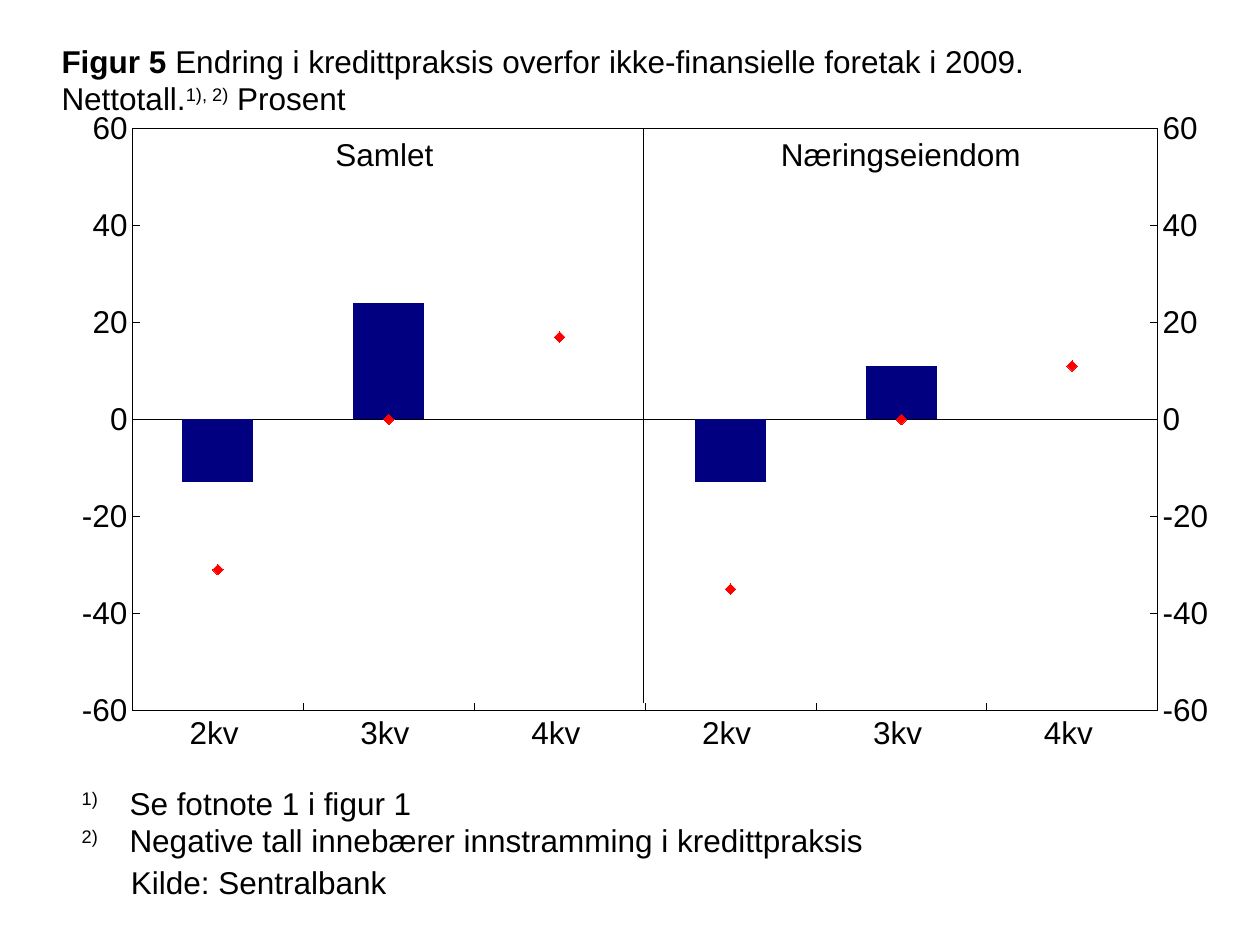
from copy import deepcopy

from lxml import etree
from pptx import Presentation
from pptx.chart.data import CategoryChartData
from pptx.dml.color import RGBColor
from pptx.enum.chart import (XL_CHART_TYPE, XL_MARKER_STYLE, XL_TICK_LABEL_POSITION,
                             XL_TICK_MARK)
from pptx.enum.shapes import MSO_CONNECTOR
from pptx.enum.text import MSO_ANCHOR, PP_ALIGN
from pptx.oxml import parse_xml
from pptx.oxml.ns import nsdecls, qn
from pptx.util import Inches, Pt

COLUMN = XL_CHART_TYPE.COLUMN_CLUSTERED
DIAMOND = XL_MARKER_STYLE.DIAMOND
INSIDE, NO_TICK = XL_TICK_MARK.INSIDE, XL_TICK_MARK.NONE
NO_LABEL = XL_TICK_LABEL_POSITION.NONE
LEFT, CENTER = PP_ALIGN.LEFT, PP_ALIGN.CENTER
TOP, BOTTOM = MSO_ANCHOR.TOP, MSO_ANCHOR.BOTTOM


def color(text):
    return RGBColor.from_string(text)


def add_text(box, lines, align=LEFT, anchor=TOP):
    """Add a text box; each line is a list of (text, style), style "b", "sup" or ""."""
    frame = slide.shapes.add_textbox(*(Inches(v) for v in box)).text_frame
    frame.word_wrap = True
    frame.vertical_anchor = anchor
    for i, line in enumerate(lines):
        para = frame.add_paragraph() if i else frame.paragraphs[0]
        para.alignment = align
        para.font.name, para.font.size = "Arial", Pt(18)
        para.font.color.rgb = color("000000")
        for words, style in line:
            run = para.add_run()
            run.text = words
            if style == "b":
                run.font.bold = True
            elif style == "sup":
                run.font._element.set("baseline", "30000")
    return frame


prs = Presentation()
prs.slide_width, prs.slide_height = Inches(10), Inches(7.5)
slide = prs.slides.add_slide(prs.slide_layouts[6])

# Chart: columns for the reported change, diamonds for the expected change
data = CategoryChartData()
data.categories = ["1", "2", "3", "4", "5", "6"]
gap = [None] * 3
data.add_series("Series 1", [-13, 24, None] + gap)
data.add_series("Series 2", gap + [-13, 11, None])
data.add_series("Series 3", [-31, 0, 17] + gap)
data.add_series("Series 4", gap + [-35, 0, 11])
x, y, w, h = 0.39, 0.86, 9.45, 5.55
chart = slide.shapes.add_chart(COLUMN, Inches(x), Inches(y), Inches(w), Inches(h),
                               data).chart
chart.has_legend = chart.has_title = False
chart.font.name, chart.font.size = "Arial Narrow", Pt(18)
chart.font.color.rgb = color("000000")

cat, val = chart.category_axis, chart.value_axis
for axis in (cat, val):
    axis.has_major_gridlines = False
    axis.minor_tick_mark = NO_TICK
    axis.format.line.color.rgb = color("000000")
    axis.format.line.width = Pt(0.25)
cat.major_tick_mark = NO_TICK
cat.tick_label_position = NO_LABEL
val.major_tick_mark = INSIDE
val.minimum_scale, val.maximum_scale, val.major_unit = -60, 60, 20
font = val.tick_labels.font
font.name, font.size = "Arial", Pt(18)
font.color.rgb = color("000000")

bars = chart.plots[0]
bars.gap_width, bars.overlap = 140, 100
bars.vary_by_categories = False
for series in list(bars.series)[:2]:
    series.invert_if_negative = False
    series.format.fill.solid()
    series.format.fill.fore_color.rgb = color("000080")

# Line plot for the last two series, on its own pair of axes
area = chart._chartSpace.find(".//" + qn("c:plotArea"))
bar = area.find(qn("c:barChart"))
line = parse_xml(f'<c:lineChart {nsdecls("c")}><c:grouping val="standard"/>'
                 '<c:varyColors val="0"/><c:marker val="1"/>'
                 '<c:axId val="1001"/><c:axId val="1002"/></c:lineChart>')
bar.addnext(line)
mark = line.find(qn("c:marker"))
for ser in bar.findall(qn("c:ser"))[2:]:
    for flag in ser.findall(qn("c:invertIfNegative")):
        ser.remove(flag)
    mark.addprevious(ser)
for series in chart.plots[1].series:
    series.smooth = False
    series.format.line.fill.background()
    series.marker.style, series.marker.size = DIAMOND, 6
    series.marker.format.fill.solid()
    series.marker.format.fill.fore_color.rgb = color("FF0000")
    series.marker.format.line.color.rgb = color("FF0000")

last = val._element
for axis, own, other, side, cross in ((cat, "1001", "1002", "b", "min"),
                                      (val, "1002", "1001", "r", "max")):
    twin = deepcopy(axis._element)
    for tag, value in (("axId", own), ("crossAx", other), ("axPos", side),
                       ("crosses", cross)):
        twin.find(qn("c:" + tag)).set("val", value)
    last.addnext(twin)
    last = twin
    if axis is cat:
        tick = twin.find(qn("c:majorTickMark"))
        tick.set("val", "in")

# Plot area: fixed inner place and a thin frame
for old in area.findall(qn("c:layout")):
    area.remove(old)
px, py, pw, ph = 0.07, 0.029, 0.861, 0.832
area.insert(0, parse_xml(
    f'<c:layout {nsdecls("c")}><c:manualLayout><c:layoutTarget val="inner"/>'
    '<c:xMode val="edge"/><c:yMode val="edge"/>'
    f'<c:x val="{px}"/><c:y val="{py}"/><c:w val="{pw}"/><c:h val="{ph}"/>'
    '</c:manualLayout></c:layout>'))
area.append(parse_xml(
    f'<c:spPr {nsdecls("c", "a")}><a:noFill/><a:ln w="9525"><a:solidFill>'
    '<a:srgbClr val="000000"/></a:solidFill></a:ln></c:spPr>'))

# Quarter names under the six categories
start, step = x + px * w, pw * w / 6
for i in range(6):
    middle = start + (i + 0.5) * step - 0.03
    add_text((middle - 0.5, 5.61, 1, 0.4), [[(f"{i % 3 + 2}kv", "")]], CENTER)

# Panel names and divider
add_text((1.06, 1.02, 3.98, 0.4), [[("Samlet", "")]], CENTER)
add_text((5.16, 1.02, 3.98, 0.4), [[("Næringseiendom", "")]], CENTER)
rule = slide.shapes.add_connector(MSO_CONNECTOR.STRAIGHT, Inches(5.11), Inches(5.58),
                                  Inches(5.11), Inches(1.02))
rule.line.color.rgb = color("000000")
rule.line.width = Pt(0.75)
etree.SubElement(rule._element.spPr, qn("a:effectLst"))

# Title, footnotes and source
add_text((0.39, 0.31, 9.06, 0.67), [[
    ("Figur 5 ", "b"),
    ("Endring i kredittpraksis overfor ikke-finansielle foretak i 2009. Nettotall.", ""),
    ("1), 2)", "sup"), (" Prosent", "")]], anchor=BOTTOM)
notes = add_text((0.55, 6.17, 8.44, 0.55), [
    [("1) ", "sup"), ("\tSe fotnote 1 i figur 1", "")],
    [("2) ", "sup"), ("\tNegative tall innebærer innstramming i kredittpraksis", "")]])
for para in notes.paragraphs:
    props = para._p.get_or_add_pPr()
    props.set("marL", str(Inches(0.38)))
    props.set("indent", str(Inches(-0.38)))
add_text((0.94, 6.8, 4.92, 0.48), [[("Kilde: Sentralbank", "")]])

prs.save("out.pptx")
